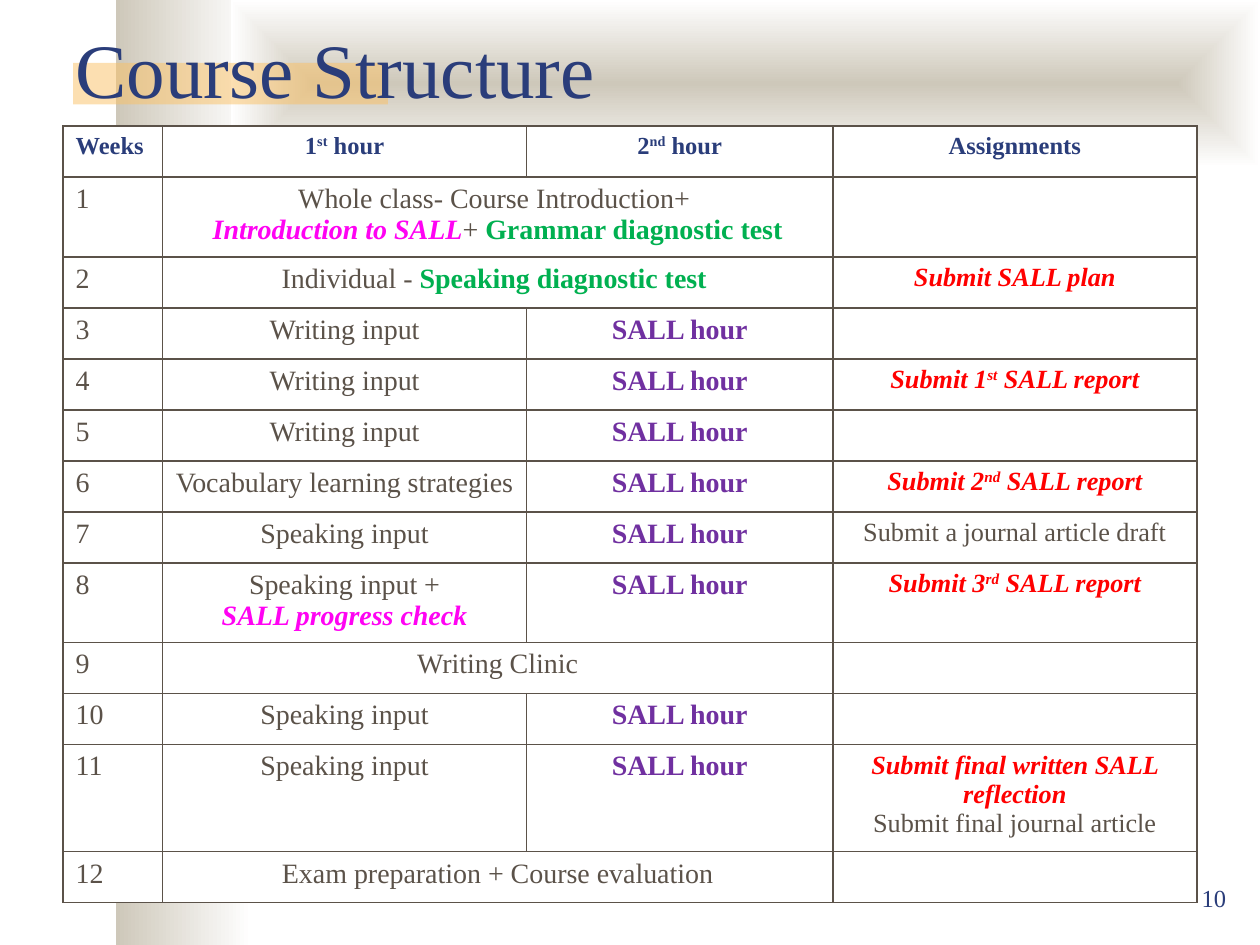
from dataclasses import dataclass
from typing import NamedTuple

from lxml.etree import SubElement
from pptx import Presentation
from pptx.dml.color import RGBColor
from pptx.enum.shapes import MSO_SHAPE
from pptx.enum.text import MSO_ANCHOR, PP_ALIGN
from pptx.oxml import parse_xml
from pptx.oxml.ns import nsdecls, qn
from pptx.util import Inches, Pt

FONT = "Times New Roman"
NAVY, BROWN, SAND, WHITE = "2A3D7A", "5B5249", "CEC8BA", "FFFFFF"
W, H = 10, 7.5


@dataclass(frozen=True)
class Style:
    size: float
    color: str
    bold: bool = False
    italic: bool = False


class Run(NamedTuple):
    text: str
    style: Style
    sup: bool = False


class Box(NamedTuple):
    left: float
    top: float
    width: float
    height: float


TITLE = Style(44, NAVY)
NUMBER = Style(14, NAVY)
HEAD = Style(14, NAVY, True)
BODY = Style(16, BROWN)
NOTE = Style(15, BROWN)
SALL = Style(16, "7030A0", True)
PINK = Style(16, "FF02F3", True, True)
TEST = Style(16, "00B050", True)
DUE = Style(15, "FF0000", True, True)


def rgb(value: str) -> RGBColor:
    return RGBColor.from_string(value)


def place(box: Box) -> list:
    return [Inches(v) for v in box]


def write(tf, lines: list, align=PP_ALIGN.LEFT) -> None:
    """Fill a text frame; each line is a list of runs."""
    for i, line in enumerate(lines):
        p = tf.add_paragraph() if i else tf.paragraphs[0]
        p.alignment = align
        for text, style, sup in line:
            r = p.add_run()
            r.text = text
            r.font.name, r.font.size = FONT, Pt(style.size)
            r.font.bold, r.font.italic = style.bold, style.italic
            r.font.color.rgb = rgb(style.color)
            if sup:
                r._r.get_or_add_rPr().set("baseline", "30000")


def add_text(s, box: Box, run: Run, align=PP_ALIGN.LEFT, anchor=MSO_ANCHOR.TOP) -> None:
    tf = s.shapes.add_textbox(*place(box)).text_frame
    tf.word_wrap = True
    tf.vertical_anchor = anchor
    write(tf, [[run]], align)


def add_rect(s, box: Box, color: str):
    sp = s.shapes.add_shape(MSO_SHAPE.RECTANGLE, *place(box))
    sp.shadow.inherit = False
    sp.line.fill.background()
    sp.fill.solid()
    sp.fill.fore_color.rgb = rgb(color)
    return sp


def add_gradient(s, box: Box, direction: str) -> None:
    """Rectangle fading from sand to white along the given direction element."""
    sp = add_rect(s, box, SAND)
    solid = sp._element.spPr.find(qn("a:solidFill"))
    stops = "".join(f'<a:gs pos="{pos}"><a:srgbClr val="{c}"/></a:gs>'
                    for pos, c in ((0, SAND), (100000, WHITE)))
    solid.getparent().replace(solid, parse_xml(
        f'<a:gradFill {nsdecls("a")} rotWithShape="1"><a:gsLst>{stops}</a:gsLst>'
        f"{direction}</a:gradFill>"))


def set_borders(cell) -> None:
    tcPr = cell._tc.get_or_add_tcPr()
    for i, side in enumerate(("lnL", "lnR", "lnT", "lnB")):
        tcPr.insert(i, parse_xml(
            f'<a:{side} {nsdecls("a")} w="12700"><a:solidFill>'
            f'<a:srgbClr val="{BROWN}"/></a:solidFill></a:{side}>'))


def report(number: str, suffix: str) -> list:
    return [[Run(f"Submit {number}", DUE), Run(suffix, DUE, True), Run(" SALL report", DUE)]]


def hour(number: str, suffix: str) -> list:
    return [[Run(number, HEAD), Run(suffix, HEAD, True), Run(" hour", HEAD)]]


def line(text: str, style: Style = BODY) -> list:
    return [[Run(text, style)]]


# Weekly plan: first hour, second hour (None = merged with the first), assignments
SALL_HOUR = line("SALL hour", SALL)
WRITING, SPEAKING = line("Writing input"), line("Speaking input")
WEEKS = [
    (line("Whole class- Course Introduction+ ")
     + [[Run("Introduction to SALL", PINK), Run("+ ", BODY),
         Run("Grammar diagnostic test", TEST)]], None, []),
    ([[Run("Individual - ", BODY), Run("Speaking diagnostic test ", TEST)]], None,
     line("Submit SALL plan", DUE)),
    (WRITING, SALL_HOUR, []),
    (WRITING, SALL_HOUR, report("1", "st")),
    (WRITING, SALL_HOUR, []),
    (line("Vocabulary learning strategies"), SALL_HOUR, report("2", "nd")),
    (SPEAKING, SALL_HOUR, line("Submit a journal article draft", NOTE)),
    (line("Speaking input +") + line("SALL progress check", PINK), SALL_HOUR,
     report("3", "rd")),
    (line("Writing Clinic"), None, []),
    (SPEAKING, SALL_HOUR, []),
    (SPEAKING, SALL_HOUR, line("Submit final written SALL reflection", DUE)
     + line("Submit final journal article", NOTE)),
    (line("Exam preparation + Course evaluation"), None, []),
]
COLUMNS = (0.79, 2.89, 2.43, 2.89)
ROW, TALL_ROWS = 0.405, {1: 0.595, 8: 0.595, 11: 0.79}


def add_plan(s, left: float, top: float) -> None:
    rows = [(line("Weeks", HEAD), hour("1", "st"), hour("2", "nd"), line("Assignments", HEAD))]
    rows += [(line(str(n)), *week) for n, week in enumerate(WEEKS, 1)]
    heights = [TALL_ROWS.get(i, ROW) for i in range(len(rows))]
    box = Box(left, top, sum(COLUMNS), sum(heights))
    table = s.shapes.add_table(len(rows), len(COLUMNS), *place(box)).table
    table.first_row = table.horz_banding = False
    for column, width in zip(table.columns, COLUMNS):
        column.width = Inches(width)
    for i, (row, height) in enumerate(zip(rows, heights)):
        table.rows[i].height = Inches(height)
        for j, lines in enumerate(row):
            cell = table.cell(i, j)
            cell.fill.solid()
            cell.fill.fore_color.rgb = rgb(WHITE)
            set_borders(cell)
            if lines is None:
                table.cell(i, j - 1).merge(cell)
            else:
                write(cell.text_frame, lines, PP_ALIGN.CENTER if j else PP_ALIGN.LEFT)


def main() -> None:
    prs = Presentation()
    prs.slide_width, prs.slide_height = Inches(W), Inches(H)
    s = prs.slides.add_slide(prs.slide_layouts[6])

    # Background bands and title accent
    add_gradient(s, Box(0.92, 0, 1.08, H), '<a:lin ang="0" scaled="1"/>')
    add_gradient(s, Box(1.83, 0, W - 1.83, 1.33),
                 '<a:path path="rect"><a:fillToRect l="50000" t="50000" r="50000" b="50000"/></a:path>')
    accent = add_rect(s, Box(0.58, 0.5, W / 4, 0.33), "FAC164")
    color = accent._element.spPr.find(qn("a:solidFill"))[0]
    SubElement(color, qn("a:alpha")).set("val", "50000")

    # Title, page number and weekly plan
    add_text(s, Box(0.5, 0.08, 9, 0.92), Run("Course Structure", TITLE), anchor=MSO_ANCHOR.MIDDLE)
    add_text(s, Box(7.5, 6.96, 2.33, 0.52), Run("10", NUMBER), PP_ALIGN.RIGHT)
    add_plan(s, 0.5, 1)

    prs.save("out.pptx")


if __name__ == "__main__":
    main()
